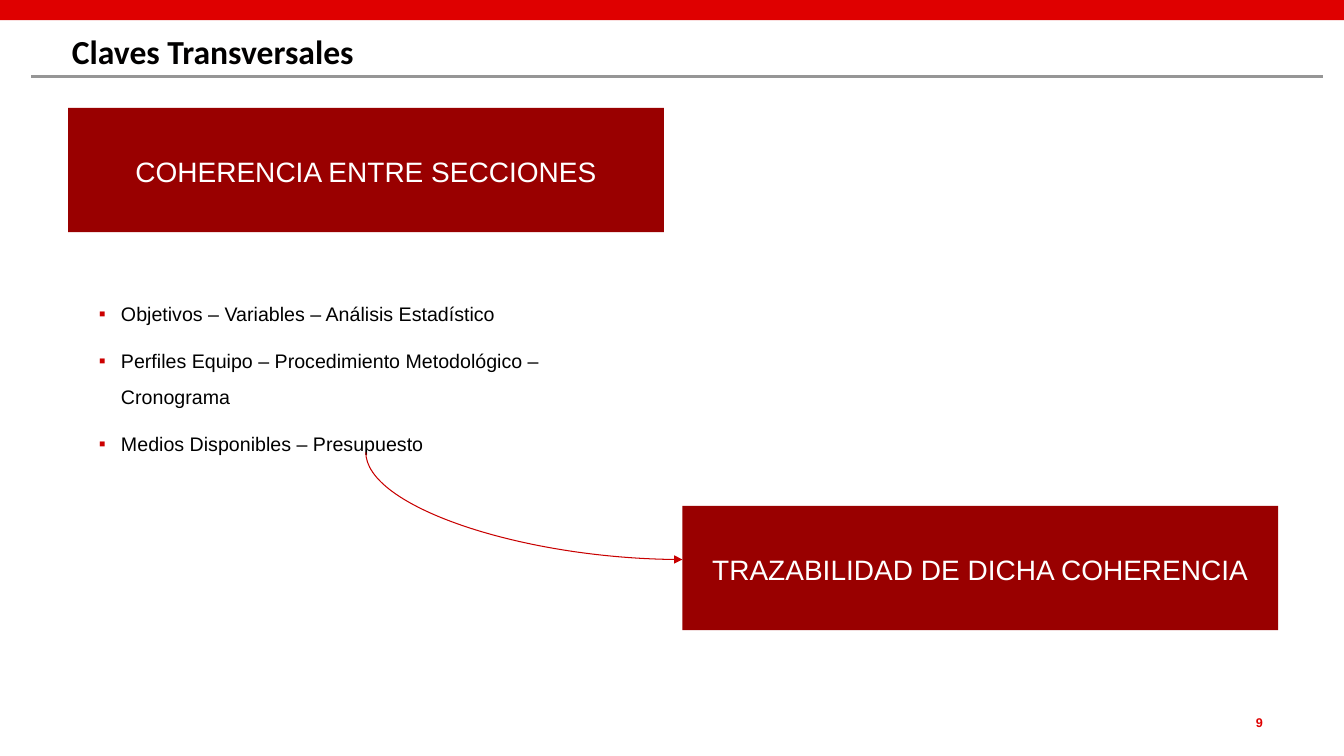
from dataclasses import dataclass

from lxml import etree
from pptx import Presentation
from pptx.dml.color import RGBColor
from pptx.enum.shapes import MSO_CONNECTOR, MSO_SHAPE
from pptx.enum.text import MSO_ANCHOR, MSO_AUTO_SIZE, PP_ALIGN
from pptx.oxml.ns import qn
from pptx.util import Cm, Pt

LEFT, CENTER, RIGHT = PP_ALIGN.LEFT, PP_ALIGN.CENTER, PP_ALIGN.RIGHT
TOP, MIDDLE = MSO_ANCHOR.TOP, MSO_ANCHOR.MIDDLE
NO_AUTOFIT = MSO_AUTO_SIZE.NONE
RECTANGLE = MSO_SHAPE.RECTANGLE
STRAIGHT, CURVE = MSO_CONNECTOR.STRAIGHT, MSO_CONNECTOR.CURVE

TITLE = "Claves Transversales"
BANNERS = [
    ("COHERENCIA ENTRE SECCIONES", 1.72, 2.72),
    ("TRAZABILIDAD DE DICHA COHERENCIA", 17.2, 12.75),
]
SECTION_LINKS = [
    "Objetivos – Variables – Análisis Estadístico",
    "Perfiles Equipo – Procedimiento Metodológico – Cronograma",
    "Medios Disponibles – Presupuesto",
]
PAGE_NUMBER = "9"

SLIDE_WIDTH, SLIDE_HEIGHT = 33.87, 19.05
BANNER_WIDTH, BANNER_HEIGHT = 15.01, 3.13
ARROW_START, ARROW_END = (9.22, 11.4), (17.2, 14.1)


@dataclass(frozen=True)
class Theme:
    top_band: str = "DF0000"
    rule: str = "969696"
    banner: str = "990000"
    banner_text: str = "FFFFFF"
    title: str = "010000"
    body: str = "000000"
    bullet: str = "CC0000"
    arrow: str = "C80000"
    title_font: str = "Calibri"
    body_font: str = "Arial"
    title_size: int = 24
    banner_size: int = 20
    body_size: int = 14
    number_size: int = 9


THEME = Theme()


def rgb(value):
    return RGBColor.from_string(value)


def add_bullet(paragraph):
    properties = paragraph._p.get_or_add_pPr()
    properties.set("marL", str(Cm(1.02)))
    properties.set("indent", str(Cm(-0.56)))
    bullet_color = etree.SubElement(properties, qn("a:buClr"))
    etree.SubElement(bullet_color, qn("a:srgbClr"), val=THEME.bullet)
    etree.SubElement(properties, qn("a:buFont"), typeface=THEME.body_font)
    etree.SubElement(properties, qn("a:buChar"), char="▪")


def write(holder, lines, *, size, color, font=THEME.body_font, bold=False,
          align=LEFT, anchor=TOP, spacing=1.0, gap=0, insets=(0.13, 0.13),
          bulleted=False):
    frame = holder.text_frame
    frame.word_wrap = True
    frame.auto_size = NO_AUTOFIT
    frame.vertical_anchor = anchor
    frame.margin_left = frame.margin_right = Cm(insets[0])
    frame.margin_top = frame.margin_bottom = Cm(insets[1])
    for index, line in enumerate(lines):
        paragraph = frame.add_paragraph() if index else frame.paragraphs[0]
        if bulleted:
            add_bullet(paragraph)
        paragraph.alignment = align
        paragraph.line_spacing = spacing
        paragraph.space_before = Pt(gap if index else 0)
        run = paragraph.add_run()
        run.text = line
        run.font.name = font
        run.font.size = Pt(size)
        run.font.bold = bold
        run.font.color.rgb = rgb(color)


def add_block(slide, left, top, width, height, fill):
    block = slide.shapes.add_shape(
        RECTANGLE, Cm(left), Cm(top), Cm(width), Cm(height))
    block.shadow.inherit = False
    block.fill.solid()
    block.fill.fore_color.rgb = rgb(fill)
    block.line.fill.background()
    return block


def add_line(slide, kind, start, end, color, width):
    line = slide.shapes.add_connector(
        kind, Cm(start[0]), Cm(start[1]), Cm(end[0]), Cm(end[1]))
    line.line.color.rgb = rgb(color)
    line.line.width = Pt(width)
    etree.SubElement(line._element.spPr, qn("a:effectLst"))
    return line


def add_curved_arrow(slide, start, end):
    center_x, center_y = ((a + b) / 2 for a, b in zip(start, end))
    half_run, half_drop = ((b - a) / 2 for a, b in zip(start, end))
    arrow = add_line(
        slide, CURVE,
        (center_x + half_drop, center_y - half_run),
        (center_x - half_drop, center_y + half_run),
        THEME.arrow, 0.75)
    properties = arrow._element.spPr
    properties.find(qn("a:xfrm")).set("rot", str(270 * 60000))
    properties.find(qn("a:prstGeom")).set("prst", "curvedConnector2")
    etree.SubElement(properties.find(qn("a:ln")), qn("a:tailEnd"), type="triangle")


def add_text_box(slide, left, top, width, height):
    return slide.shapes.add_textbox(Cm(left), Cm(top), Cm(width), Cm(height))


def main():
    deck = Presentation()
    deck.slide_width, deck.slide_height = Cm(SLIDE_WIDTH), Cm(SLIDE_HEIGHT)
    slide = deck.slides.add_slide(deck.slide_layouts[5])

    add_block(slide, 0, 0, SLIDE_WIDTH, 0.51, THEME.top_band)
    add_line(slide, STRAIGHT, (0.79, 1.93), (33.35, 1.93), THEME.rule, 2.25)

    title = slide.shapes.title
    title.left, title.top = Cm(1.68), Cm(0.76)
    title.width, title.height = Cm(31.04), Cm(1.19)
    write(title, [TITLE], size=THEME.title_size, color=THEME.title,
          font=THEME.title_font, bold=True, anchor=MIDDLE, spacing=0.9)

    for label, left, top in BANNERS:
        banner = add_block(
            slide, left, top, BANNER_WIDTH, BANNER_HEIGHT, THEME.banner)
        write(banner, [label], size=THEME.banner_size, color=THEME.banner_text,
              align=CENTER, anchor=MIDDLE, spacing=1.1)

    links = add_text_box(slide, 1.78, 7.19, 14.91, 4.45)
    write(links, SECTION_LINKS, size=THEME.body_size, color=THEME.body,
          spacing=1.5, gap=8.4, insets=(0.25, 0.13), bulleted=True)

    add_curved_arrow(slide, ARROW_START, ARROW_END)

    number = add_text_box(slide, 28.63, 18.01, 3.2, 0.38)
    write(number, [PAGE_NUMBER], size=THEME.number_size, color=THEME.top_band,
          bold=True, align=RIGHT, insets=(0, 0))

    deck.save("out.pptx")


if __name__ == "__main__":
    main()
